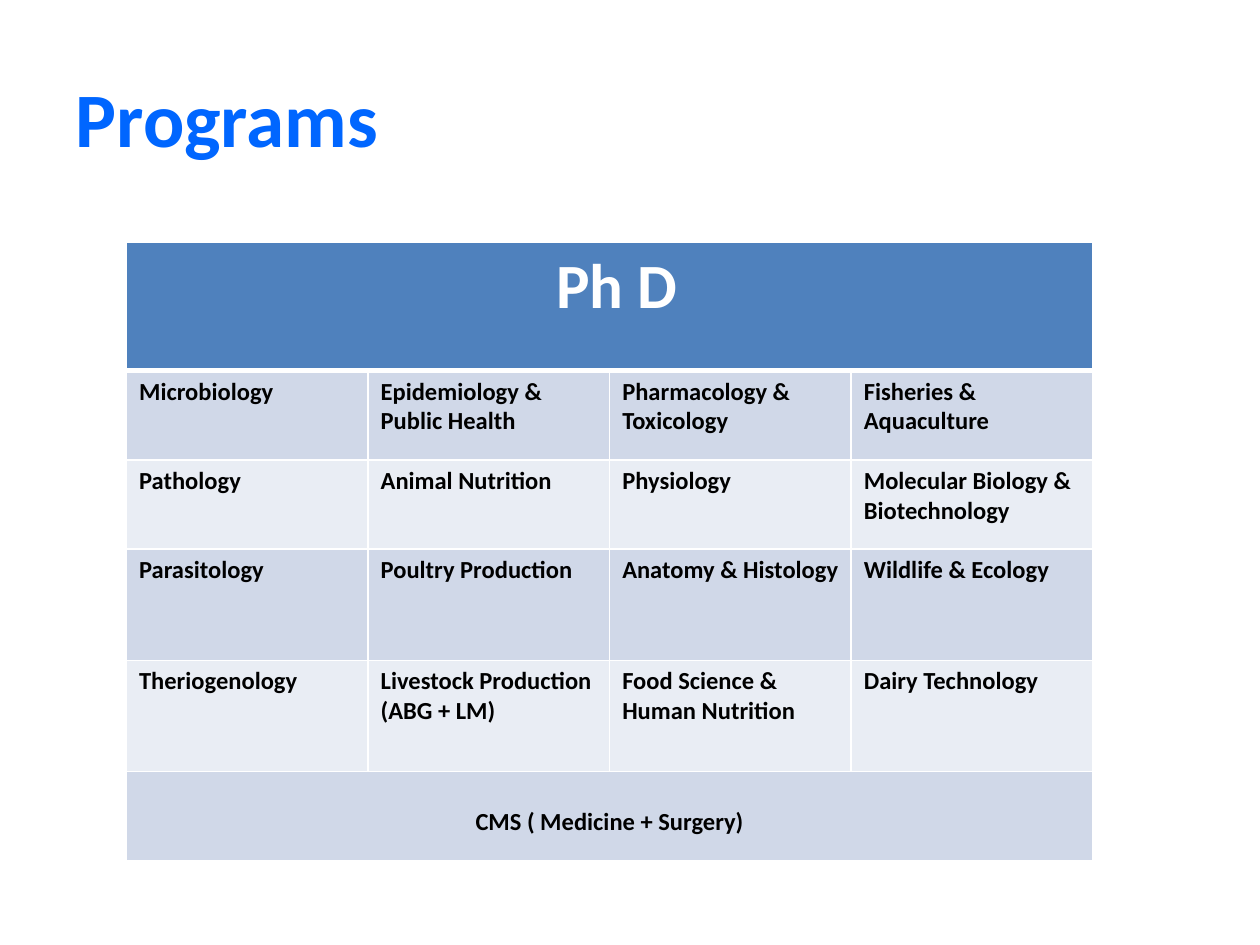
import pptx
import pptx.util
import pptx.dml.color
import pptx.enum.text
import pptx.oxml.ns
import lxml.etree

Cm, Pt = pptx.util.Cm, pptx.util.Pt
ALIGN = pptx.enum.text.PP_ALIGN

COLORS = {"title": "0066FF", "header": "4F81BD", "odd": "D0D8E8",
          "even": "E9EDF4", "text": "000000", "white": "FFFFFF"}
FONT = "Calibri"

# One entry per row; a row with a single text spans the whole table.
PROGRAMS = [
    [" Ph D"],
    ["Microbiology", "Epidemiology & Public Health",
     "Pharmacology & Toxicology", "Fisheries & Aquaculture"],
    ["Pathology", "Animal Nutrition",
     "Physiology", "Molecular Biology & Biotechnology"],
    ["Parasitology", "Poultry Production",
     "Anatomy & Histology", "Wildlife & Ecology"],
    ["Theriogenology", "Livestock Production\n(ABG + LM)",
     "Food Science & Human Nutrition", "Dairy Technology"],
    ["CMS ( Medicine + Surgery)"],
]
ROW_HEIGHTS = [2.59, 1.8, 1.8, 2.24, 2.24, 1.8]
COLUMN_COUNT = 4
COLUMN_WIDTH = 4.87


def format_text(text_frame, size, color, align):
    for paragraph in text_frame.paragraphs:
        paragraph.alignment = align
        for run in paragraph.runs:
            run.font.name = FONT
            run.font.size = Pt(size)
            run.font.bold = True
            run.font.color.rgb = pptx.dml.color.RGBColor.from_string(COLORS[color])


def set_borders(cell, top, bottom):
    """Draw white cell borders; top and bottom are widths in points."""
    properties = cell._tc.get_or_add_tcPr()
    widths = {"lnL": 1, "lnR": 1, "lnT": top, "lnB": bottom}
    for position, (side, width) in enumerate(widths.items()):
        line = lxml.etree.Element(pptx.oxml.ns.qn(f"a:{side}"), w=str(Pt(width)))
        fill = lxml.etree.SubElement(line, pptx.oxml.ns.qn("a:solidFill"))
        lxml.etree.SubElement(fill, pptx.oxml.ns.qn("a:srgbClr"), val=COLORS["white"])
        properties.insert(position, line)


def add_programs_table(slide):
    table = slide.shapes.add_table(
        len(PROGRAMS), COLUMN_COUNT, Cm(2.55), Cm(4.88),
        Cm(COLUMN_WIDTH * COLUMN_COUNT), Cm(sum(ROW_HEIGHTS))).table
    for column in table.columns:
        column.width = Cm(COLUMN_WIDTH)
    for index, (texts, height) in enumerate(zip(PROGRAMS, ROW_HEIGHTS)):
        table.rows[index].height = Cm(height)
        is_header = index == 0
        spans = len(texts) == 1
        fill = "header" if is_header else "odd" if index % 2 else "even"
        for column in range(COLUMN_COUNT):
            cell = table.cell(index, column)
            cell.fill.solid()
            cell.fill.fore_color.rgb = pptx.dml.color.RGBColor.from_string(COLORS[fill])
            set_borders(cell, top=3 if index == 1 else 1, bottom=3 if is_header else 1)
        if spans:
            table.cell(index, 0).merge(table.cell(index, COLUMN_COUNT - 1))
        for column, text in enumerate(texts):
            cell = table.cell(index, column)
            cell.text_frame.text = text
            format_text(cell.text_frame, 36 if is_header else 14,
                        "white" if is_header else "text",
                        ALIGN.CENTER if spans else ALIGN.LEFT)
    table.cell(len(PROGRAMS) - 1, 0).margin_top = Cm(0.73)


def main():
    presentation = pptx.Presentation()
    presentation.slide_width, presentation.slide_height = Cm(25.4), Cm(19.05)
    slide = presentation.slides.add_slide(presentation.slide_layouts[5])

    title = slide.shapes.title
    title.left, title.top, title.width, title.height = Cm(1.27), Cm(0.76), Cm(22.86), Cm(3.18)
    title.text_frame.text = "Programs"
    title.text_frame.vertical_anchor = pptx.enum.text.MSO_ANCHOR.MIDDLE
    format_text(title.text_frame, 44, "title", ALIGN.LEFT)

    add_programs_table(slide)
    presentation.save("out.pptx")


if __name__ == "__main__":
    main()
